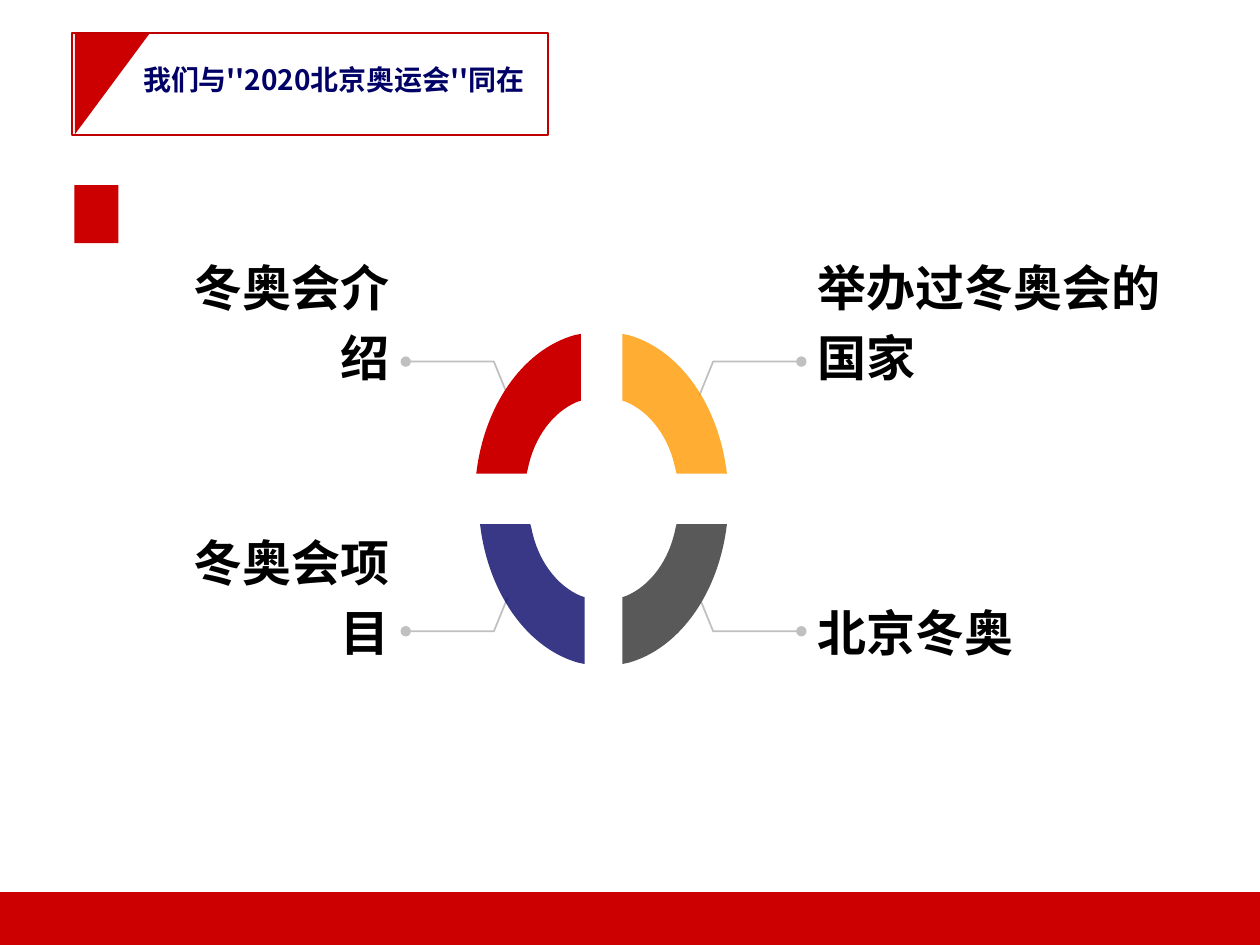
from dataclasses import dataclass

from lxml.etree import SubElement
from pptx import Presentation
from pptx.dml.color import RGBColor
from pptx.enum.shapes import MSO_SHAPE
from pptx.enum.text import MSO_ANCHOR, PP_ALIGN
from pptx.oxml.ns import qn
from pptx.util import Inches, Pt


@dataclass(frozen=True)
class Theme:
    red: str = "CC0000"
    frame: str = "C00000"
    amber: str = "FF9900"
    navy: str = "000066"
    slate: str = "595959"
    lead: str = "C0C0C0"
    ink: str = "000000"
    font: str = "Noto Sans CJK SC"
    latin: str = "Calibri"
    head: int = 16
    label: int = 28


@dataclass(frozen=True)
class Topic:
    text: str
    side: int      # -1 left, 1 right
    down: int      # -1 above the centre, 1 below
    edge: float    # x of the segment's straight edge
    width: float   # label width
    color: str
    alpha: int = 100
    font: str = Theme.font


THEME = Theme()
Point = tuple[float, float]

TOPICS = [
    Topic("举办过冬奥会的国家", 1, -1, 4.94, 2.76, THEME.amber, 80, THEME.latin),
    Topic("冬奥会介绍", -1, -1, 4.61, 1.9, THEME.red),
    Topic("北京冬奥", 1, 1, 4.94, 1.9, THEME.slate),
    Topic("冬奥会项目", -1, 1, 4.64, 1.9, THEME.navy, 78, THEME.latin),
]

# Upper right segment, measured from its top left corner
ARC = [
    (0, 0), (0.05, 0.01),
    (0.44, 0.12), (0.74, 0.53), (0.82, 1.04),
    (0.83, 1.11), (0.43, 1.11), (0.42, 1.07),
    (0.37, 0.82), (0.22, 0.62), (0.03, 0.54),
    (0, 0.53),
]
# Places in ARC where three points (two controls, one end) form a curve
BENDS = (2, 8)
# Lower right leader, measured from the centre of the leaders
LEAD = [(0.76, 0.8), (0.87, 1.07), (1.57, 1.07)]


def paint(shape, fill: str = "", line: str = "", alpha: int = 100) -> None:
    shape.shadow.inherit = False
    if fill:
        shape.fill.solid()
        shape.fill.fore_color.rgb = RGBColor.from_string(fill)
        if alpha < 100:
            tint = shape._element.spPr.find(qn("a:solidFill"))[0]
            SubElement(tint, qn("a:alpha"), val=str(alpha * 1000))
    else:
        shape.fill.background()
    if line:
        shape.line.color.rgb = RGBColor.from_string(line)
        shape.line.width = Pt(1)
    else:
        shape.line.fill.background()


def block(slide, kind, x: float, y: float, w: float, h: float, **look):
    shape = slide.shapes.add_shape(kind, Inches(x), Inches(y), Inches(w), Inches(h))
    paint(shape, **look)
    return shape


def bend(shape, starts: tuple[int, ...]) -> None:
    """Join three line points from each start into one cubic curve."""
    lines = list(shape._element.iter(qn("a:lnTo")))
    for start in starts:
        trio = lines[start - 1:start + 2]
        root = trio[0].getparent()
        cubic = SubElement(root, qn("a:cubicBezTo"))
        trio[0].addprevious(cubic)
        for node in trio:
            cubic.append(node[0])
            root.remove(node)


def trace(slide, points: list[Point], close: bool, **look):
    dots = [(Inches(x), Inches(y)) for x, y in points]
    pen = slide.shapes.build_freeform(*dots[0])
    pen.add_line_segments(dots[1:], close=close)
    shape = pen.convert_to_shape()
    paint(shape, **look)
    return shape


def write(slide, text: str, x: float, y: float, w: float, h: float, *,
          size: int, color: str, font: str = THEME.font, align=PP_ALIGN.LEFT,
          anchor=MSO_ANCHOR.TOP, space: float = 1.0, inset: bool = True) -> None:
    frame = slide.shapes.add_textbox(Inches(x), Inches(y), Inches(w), Inches(h)).text_frame
    frame.word_wrap = True
    frame.vertical_anchor = anchor
    if not inset:
        frame.margin_left = frame.margin_right = 0
        frame.margin_top = frame.margin_bottom = 0
    para = frame.paragraphs[0]
    para.alignment = align
    para.line_spacing = space
    run = para.add_run()
    run.text = text
    run.font.size = Pt(size)
    run.font.bold = True
    run.font.name = font
    run.font.color.rgb = RGBColor.from_string(color)
    SubElement(run.font._element, qn("a:ea"), typeface=THEME.font)


def leader(slide, topic: Topic) -> None:
    points = [(4.79 + topic.side * x, 3.94 + topic.down * y) for x, y in LEAD]
    shape = trace(slide, points, False, line=THEME.lead)
    SubElement(shape.line._get_or_add_ln(), qn("a:tailEnd"), type="oval")


def segment(slide, topic: Topic) -> None:
    top = 3.96 + topic.down * 1.31
    points = [(topic.edge + topic.side * x, top - topic.down * y) for x, y in ARC]
    shape = trace(slide, points, True, fill=topic.color, alpha=topic.alpha)
    bend(shape, BENDS)


def label(slide, topic: Topic) -> None:
    right = topic.side > 0
    write(slide, topic.text, 6.49 if right else 1.19, 2.26 if topic.down < 0 else 4.44,
          topic.width, 0.81, size=THEME.label, color=THEME.ink, font=topic.font,
          align=PP_ALIGN.LEFT if right else PP_ALIGN.RIGHT,
          anchor=MSO_ANCHOR.BOTTOM, space=1.2, inset=False)


def main() -> None:
    deck = Presentation()
    deck.slide_width, deck.slide_height = Inches(10), Inches(7.5)
    slide = deck.slides.add_slide(deck.slide_layouts[6])

    # Footer band
    block(slide, MSO_SHAPE.RECTANGLE, 0, 7.08, 10, 0.42, fill=THEME.red)

    # Ring with leaders and labels
    for draw in (leader, segment, label):
        for topic in TOPICS:
            draw(slide, topic)

    # Marker and title frame
    block(slide, MSO_SHAPE.RECTANGLE, 0.59, 1.47, 0.35, 0.46, fill=THEME.red)
    flag = block(slide, MSO_SHAPE.RIGHT_TRIANGLE, 0.49, 0.36, 0.81, 0.6, fill=THEME.red)
    flag.rotation = 90
    block(slide, MSO_SHAPE.RECTANGLE, 0.57, 0.26, 3.78, 0.81, line=THEME.frame)
    write(slide, "我们与''2020北京奥运会''同在", -0.32, 0.45, 5.94, 0.37,
          size=THEME.head, color=THEME.navy, align=PP_ALIGN.CENTER)

    deck.save("out.pptx")


if __name__ == "__main__":
    main()
